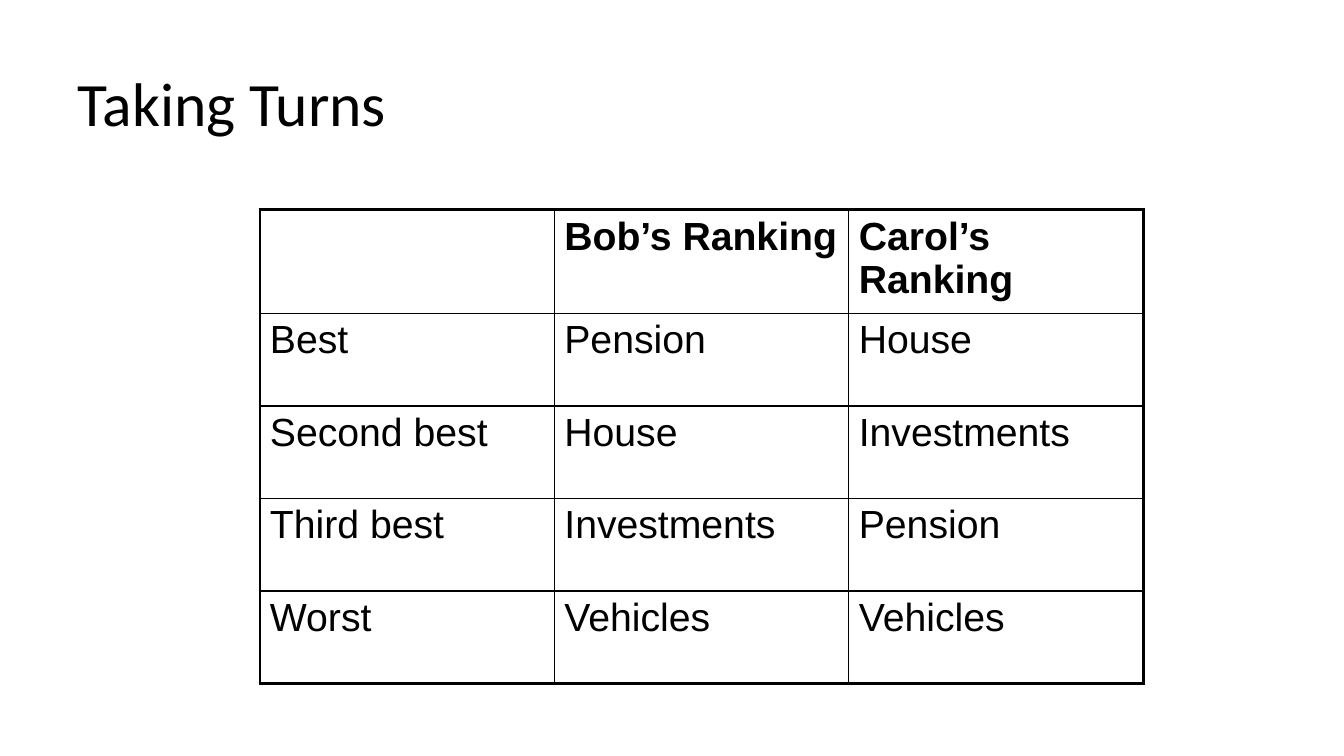
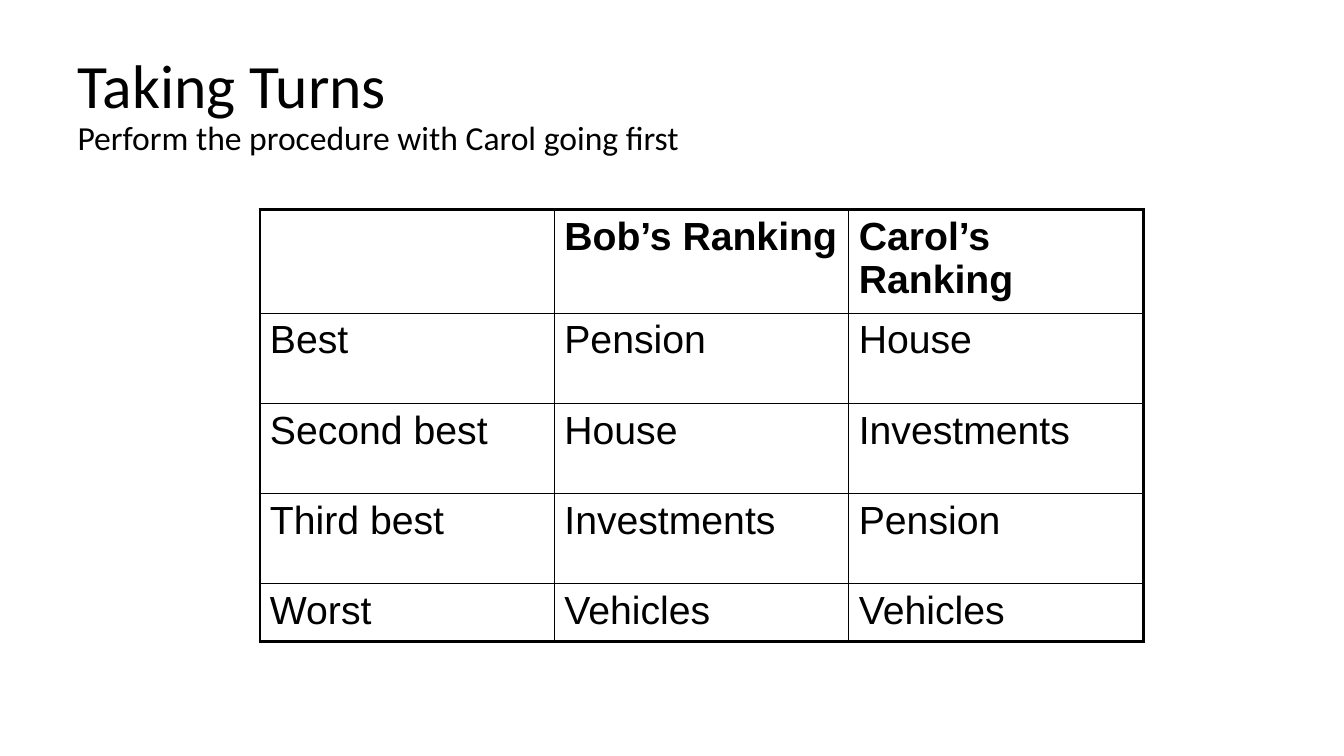
from pptx import Presentation
from pptx.dml.color import RGBColor as Rgb
from pptx.enum.text import MSO_ANCHOR as Anchor, PP_ALIGN as Align
from pptx.oxml.ns import qn
from pptx.util import Cm, Pt
from lxml.etree import SubElement as Sub

HUES = {"ink": "000000", "page": "FFFFFF"}
THIN, THICK = Pt(1), Pt(2.25)
HEAD = "Taking Turns"
ROWS = [
    ["", "Bob’s Ranking", "Carol’s Ranking"],
    ["Best", "Pension", "House"],
    ["Second best", "House", "Investments"],
    ["Third best", "Investments", "Pension"],
    ["Worst", "Vehicles", "Vehicles"],
]
WIDE = 7.42
PAGES = [
    ("", [2.62, 2.33, 2.33, 2.33, 2.33]),
    ("Perform the procedure with Carol going first", [2.62, 2.27, 2.27, 2.27, 1.45]),
]


def write(para, text, size, face, bold=False):
    run = para.add_run()
    run.text = text
    font = run.font
    font.size, font.name, font.bold = Pt(size), face, bold
    font.color.rgb = Rgb.from_string(HUES["ink"])


def edge(cell, side, width):
    line = Sub(cell._tc.get_or_add_tcPr(), qn("a:ln" + side), w=str(width))
    fill = Sub(line, qn("a:solidFill"))
    Sub(fill, qn("a:srgbClr"), val=HUES["ink"])


deck = Presentation()
deck.slide_width, deck.slide_height = Cm(33.87), Cm(19.05)
back = deck.slide_master.background.fill
back.solid()
back.fore_color.rgb = Rgb.from_string(HUES["page"])

for note, highs in PAGES:
    slide = deck.slides.add_slide(deck.slide_layouts[5])
    title = slide.shapes.title
    title.left, title.top = Cm(1.7), Cm(0.69)
    title.width, title.height = Cm(31.06), Cm(3.99)
    title.text_frame.vertical_anchor = Anchor.MIDDLE
    para = title.text_frame.paragraphs[0]
    para.alignment = Align.LEFT
    para.line_spacing = 0.9
    write(para, HEAD, 44, "Calibri")
    if note:
        para.add_line_break()
        write(para, note, 24, "Calibri")

    frame = slide.shapes.add_table(
        len(ROWS), len(ROWS[0]), Cm(6.55), Cm(5.28),
        Cm(WIDE * len(ROWS[0])), Cm(sum(highs)))
    grid = frame.table
    grid.first_row = grid.horz_banding = False
    for col in grid.columns:
        col.width = Cm(WIDE)
    for r, (words, high) in enumerate(zip(ROWS, highs)):
        grid.rows[r].height = Cm(high)
        for c, word in enumerate(words):
            cell = grid.cell(r, c)
            rims = {"L": c == 0, "R": c == len(words) - 1,
                    "T": r == 0, "B": r == len(ROWS) - 1}
            for side, rim in rims.items():
                edge(cell, side, THICK if rim else THIN)
            cell.fill.background()
            if word:
                write(cell.text_frame.paragraphs[0], word, 28, "Arial", r == 0)

deck.save("out.pptx")
